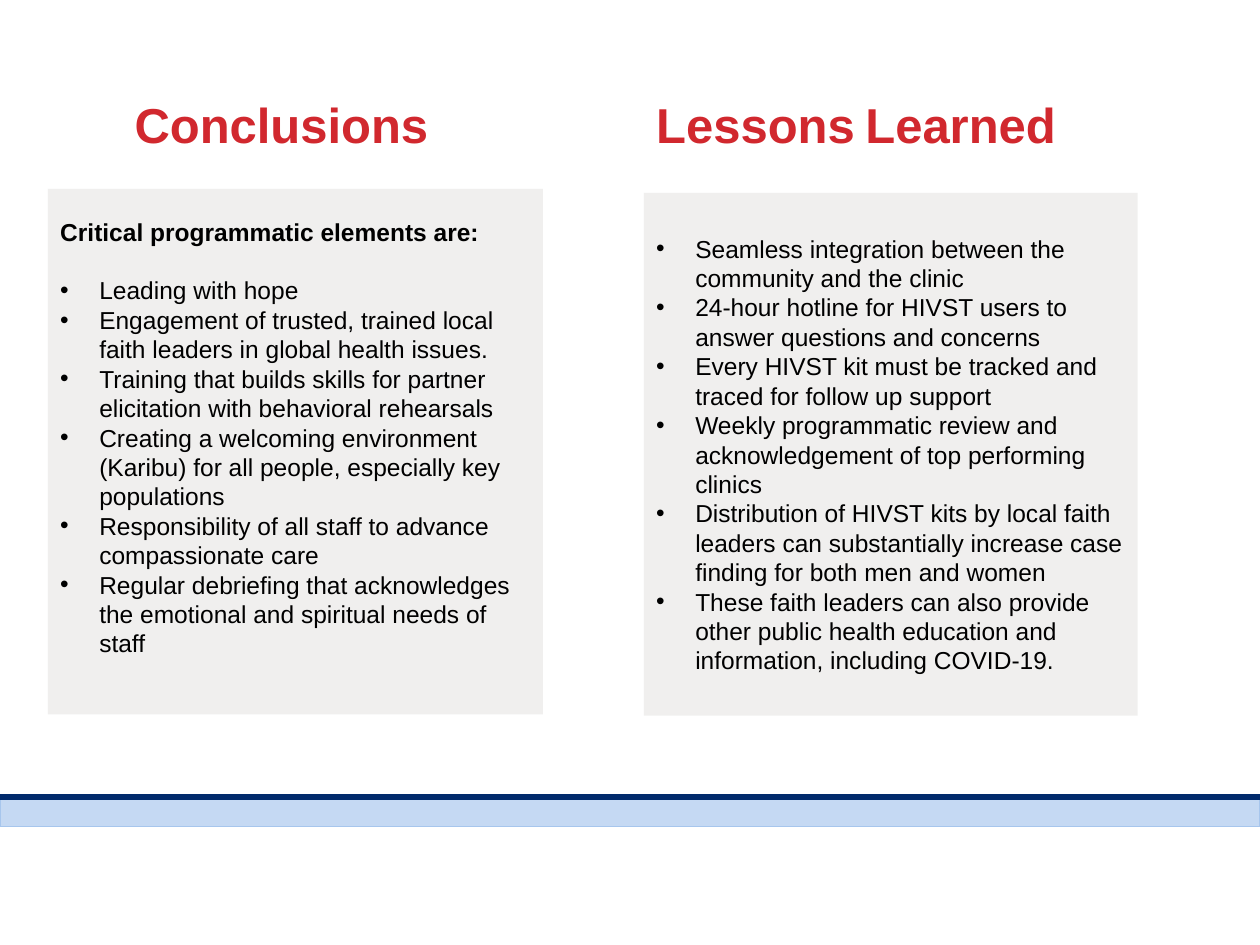
import pptx
import pptx.dml.color
import pptx.enum.shapes
import pptx.enum.text
import pptx.oxml.ns
import pptx.util
from lxml import etree
from pptx.util import Inches

SHAPES = pptx.enum.shapes.MSO_SHAPE
ANCHORS = pptx.enum.text.MSO_ANCHOR
LEADING = 1.2

CONCLUSIONS = [
    "Leading with hope",
    "Engagement of trusted, trained local faith leaders in global health issues.",
    "Training that builds skills for partner elicitation with behavioral rehearsals",
    "Creating a welcoming environment (Karibu) for all people, especially key populations",
    "Responsibility of all staff to advance compassionate care",
    "Regular debriefing that acknowledges the emotional and spiritual needs of staff",
]
LESSONS = [
    "Seamless integration between the community and the clinic",
    "24-hour hotline for HIVST users to answer questions and concerns",
    "Every HIVST kit must be tracked and traced for follow up support",
    "Weekly programmatic review and acknowledgement of top performing clinics",
    "Distribution of HIVST kits by local faith leaders can substantially increase "
    "case finding for both men and women",
    "These faith leaders can also provide other public health education and "
    "information, including COVID-19.",
]


def rgb(value):
    return pptx.dml.color.RGBColor.from_string(value)


def sub(parent, tag, **attrs):
    return etree.SubElement(parent, pptx.oxml.ns.qn(tag), attrs)


def add_run(p, text, size=14, color="000000", bold=False, font="Arial"):
    r = p.add_run()
    r.text = text
    r.font.name = font
    r.font.size = pptx.util.Pt(size)
    r.font.bold = bold
    r.font.color.rgb = rgb(color)


class SlideBuilder:
    accent = "D1282E"
    panel_fill = "CFCDC9"
    band_fill = "A7C6ED"
    rule_fill = "012A6C"
    text_size = 14
    title_size = 28
    inset = Inches(0.1)

    def __init__(self, prs):
        self.s = prs.slides.add_slide(prs.slide_layouts[6])

    def frame(self, sp, anchor, bottom=0.1):
        tf = sp.text_frame
        tf.word_wrap = True
        tf.vertical_anchor = anchor
        tf.margin_left = tf.margin_right = tf.margin_top = self.inset
        tf.margin_bottom = Inches(bottom)
        return tf

    def paragraph(self, tf, size):
        p = tf.paragraphs[0] if not tf.paragraphs[0].runs else tf.add_paragraph()
        p.alignment = pptx.enum.text.PP_ALIGN.LEFT
        p.line_spacing = pptx.util.Pt(size * LEADING)
        return p

    def shape(self, kind, left, top, width, height, fill, opacity=100, line=None):
        sp = self.s.shapes.add_shape(
            kind, Inches(left), Inches(top), Inches(width), Inches(height))
        sp.shadow.inherit = False
        sp.fill.solid()
        sp.fill.fore_color.rgb = rgb(fill)
        if opacity < 100:
            color = sp.fill._xPr.find(".//" + pptx.oxml.ns.qn("a:srgbClr"))
            sub(color, "a:alpha", val=str(opacity * 1000))
        if line:
            sp.line.color.rgb = rgb(line)
            sp.line.width = pptx.util.Pt(0.75)
        else:
            sp.line.fill.background()
        return sp

    def band(self, top, height):
        sp = self.shape(SHAPES.RECTANGLE, 0, top, 10, height,
                        self.band_fill, 66, self.band_fill)
        sp.rotation = 180

    def rule(self, left, width):
        sp = self.shape(SHAPES.MATH_MINUS, left, 6.26, width, 0.13,
                        self.rule_fill, line=self.rule_fill)
        sp.adjustments[0] = 0.269
        sp.rotation = 180

    def title(self, left, words, gap_size=22):
        sp = self.s.shapes.add_textbox(
            Inches(left), Inches(0.65), Inches(3.69), Inches(0.59))
        p = self.paragraph(self.frame(sp, ANCHORS.TOP), self.title_size)
        for i, word in enumerate(words):
            if i:
                add_run(p, " ", gap_size, self.accent, True)
            add_run(p, word, self.title_size, self.accent, True)

    def panel(self, left, top, width, height, items, heading=None, bottom=0.1):
        sp = self.shape(SHAPES.RECTANGLE, left, top, width, height,
                        self.panel_fill, 30)
        tf = self.frame(sp, ANCHORS.MIDDLE, bottom)
        if heading:
            p = self.paragraph(tf, self.text_size)
            p.space_after = pptx.util.Pt(self.text_size * LEADING)
            add_run(p, heading, self.text_size, bold=True)
        for item in items:
            p = self.paragraph(tf, self.text_size)
            self.bullet(p)
            add_run(p, item, self.text_size)

    def bullet(self, p):
        pPr = p._p.get_or_add_pPr()
        indent = Inches(0.31)
        pPr.set("marL", str(indent))
        pPr.set("indent", str(-indent))
        sub(sub(pPr, "a:buClr"), "a:srgbClr", val="000000")
        sub(pPr, "a:buFont", typeface="Arial")
        sub(pPr, "a:buChar", char="•")


def main():
    prs = pptx.Presentation()
    prs.slide_width = Inches(10)
    prs.slide_height = Inches(7.5)
    slide = SlideBuilder(prs)
    slide.panel(5.11, 1.53, 3.92, 4.15, LESSONS)
    slide.band(6.33, 0.23)
    slide.title(0.97, ["Conclusions"])
    slide.rule(-0.99, 7.34)
    slide.rule(4.54, 6.3)
    slide.title(5.11, ["Lessons", "Learned"])
    slide.panel(0.38, 1.5, 3.93, 4.17, CONCLUSIONS,
                "Critical programmatic elements are:", bottom=0.33)
    prs.save("out.pptx")


if __name__ == "__main__":
    main()
